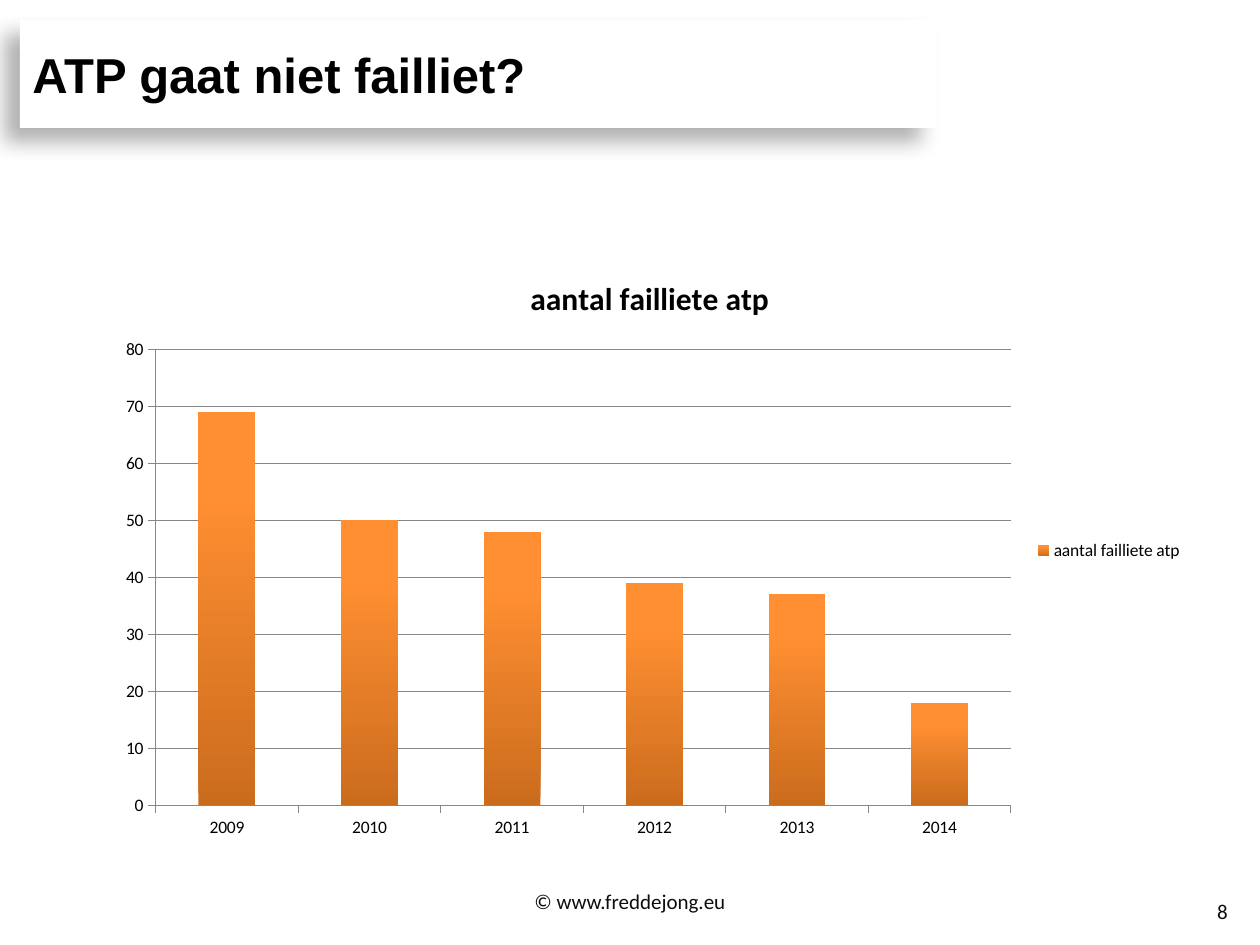
from lxml import etree
from pptx import Presentation
from pptx import util as u
from pptx.chart import data as chart_data
from pptx.dml.color import RGBColor
from pptx.enum import chart as charts, text
from pptx.oxml.ns import qn

BLACK = RGBColor(0x00, 0x00, 0x00)
WHITE = RGBColor(0xFF, 0xFF, 0xFF)
FOOTER_GREY = RGBColor(0x0D, 0x0D, 0x0D)
AXIS_GREY = RGBColor(0x87, 0x87, 0x87)
BAR_DARK = RGBColor(0xCB, 0x6C, 0x1D)
BAR_LIGHT = RGBColor(0xFF, 0x8F, 0x32)

TITLE_ONLY = 5
YEARS = range(2009, 2015)
BANKRUPTCIES = (69, 50, 48, 39, 37, 18)


class SlideBuilder:
    heading_font = "Arial"
    body_font = "Calibri"

    def __init__(self, presentation):
        self.slide = presentation.slides.add_slide(
            presentation.slide_layouts[TITLE_ONLY])

    def format_font(self, font, name, size, color, bold=False):
        font.name = name
        font.size = u.Pt(size)
        font.color.rgb = color
        font.bold = bold

    def add_shadow(self, shape, blur, distance, direction, opacity):
        """Add an outer shadow; blur and distance in points, direction in degrees."""
        effects = etree.SubElement(shape._element.spPr, qn("a:effectLst"))
        shadow = etree.SubElement(
            effects, qn("a:outerShdw"), blurRad=str(u.Pt(blur)),
            dist=str(u.Pt(distance)), dir=str(direction * 60000),
            algn="tl", rotWithShape="0")
        color = etree.SubElement(shadow, qn("a:srgbClr"), val=str(BLACK))
        etree.SubElement(color, qn("a:alpha"), val=str(opacity * 1000))

    def set_title(self, wording, left, top, width, height):
        title = self.slide.shapes.title
        title.left, title.top = u.Cm(left), u.Cm(top)
        title.width, title.height = u.Cm(width), u.Cm(height)
        title.fill.solid()
        title.fill.fore_color.rgb = WHITE
        self.add_shadow(title, blur=12, distance=12, direction=140, opacity=30)
        frame = title.text_frame
        frame.text = wording
        frame.auto_size = text.MSO_AUTO_SIZE.NONE
        frame.vertical_anchor = text.MSO_ANCHOR.MIDDLE
        paragraph = frame.paragraphs[0]
        paragraph.alignment = text.PP_ALIGN.LEFT
        self.format_font(paragraph.font, self.heading_font, 28, BLACK, bold=True)

    def add_footer(self, wording, left, top, width, height, alignment):
        box = self.slide.shapes.add_textbox(
            u.Cm(left), u.Cm(top), u.Cm(width), u.Cm(height))
        frame = box.text_frame
        frame.text = wording
        frame.word_wrap = True
        frame.vertical_anchor = text.MSO_ANCHOR.MIDDLE
        paragraph = frame.paragraphs[0]
        paragraph.alignment = alignment
        self.format_font(paragraph.font, self.body_font, 12, FOOTER_GREY)

    def add_column_chart(self, name, categories, values, left, top, width, height):
        data = chart_data.CategoryChartData()
        data.categories = categories
        data.add_series(name, values)
        chart = self.slide.shapes.add_chart(
            charts.XL_CHART_TYPE.COLUMN_CLUSTERED,
            u.Cm(left), u.Cm(top), u.Cm(width), u.Cm(height), data).chart
        self.format_font(chart.font, self.body_font, 10, BLACK)

        chart.has_title = True
        chart.chart_title.include_in_layout = False
        title_frame = chart.chart_title.text_frame
        title_frame.text = name
        self.format_font(title_frame.paragraphs[0].font,
                         self.body_font, 18, BLACK, bold=True)

        chart.has_legend = True
        chart.legend.position = charts.XL_LEGEND_POSITION.RIGHT
        chart.legend.include_in_layout = False

        for axis in (chart.category_axis, chart.value_axis):
            axis.major_tick_mark = charts.XL_TICK_MARK.OUTSIDE
            axis.minor_tick_mark = charts.XL_TICK_MARK.NONE
            self.format_line(axis.format.line)
        chart.value_axis.minimum_scale = 0
        chart.value_axis.maximum_scale = 80
        chart.value_axis.major_unit = 10
        chart.value_axis.has_major_gridlines = True
        self.format_line(chart.value_axis.major_gridlines.format.line)

        plot = chart.plots[0]
        plot.gap_width = 150
        plot.vary_by_categories = False
        self.fill_bars(plot.series[0].format.fill)

    def format_line(self, line):
        line.color.rgb = AXIS_GREY
        line.width = u.Pt(0.75)

    def fill_bars(self, fill):
        """Shade the bars from dark at the foot to light near the top."""
        fill.gradient()
        fill.gradient_angle = 90
        stops = zip(fill.gradient_stops, (BAR_DARK, BAR_LIGHT), (0, 0.8))
        for stop, color, position in stops:
            stop.color.rgb = color
            stop.position = position


def main():
    presentation = Presentation()
    presentation.slide_width = u.Cm(25.4)
    presentation.slide_height = u.Cm(19.05)

    builder = SlideBuilder(presentation)
    builder.set_title("ATP gaat niet failliet?", 0.4, 0.4, 18.47, 2.18)
    builder.add_footer("8", 19.08, 17.86, 5.92, 1.02, text.PP_ALIGN.RIGHT)
    builder.add_footer("© www.freddejong.eu", 8.68, 17.65, 8.04, 1.02,
                       text.PP_ALIGN.CENTER)
    builder.add_column_chart("aantal failliete atp", YEARS, BANKRUPTCIES,
                             2.1, 5.08, 22, 12.04)
    presentation.save("out.pptx")


if __name__ == "__main__":
    main()
